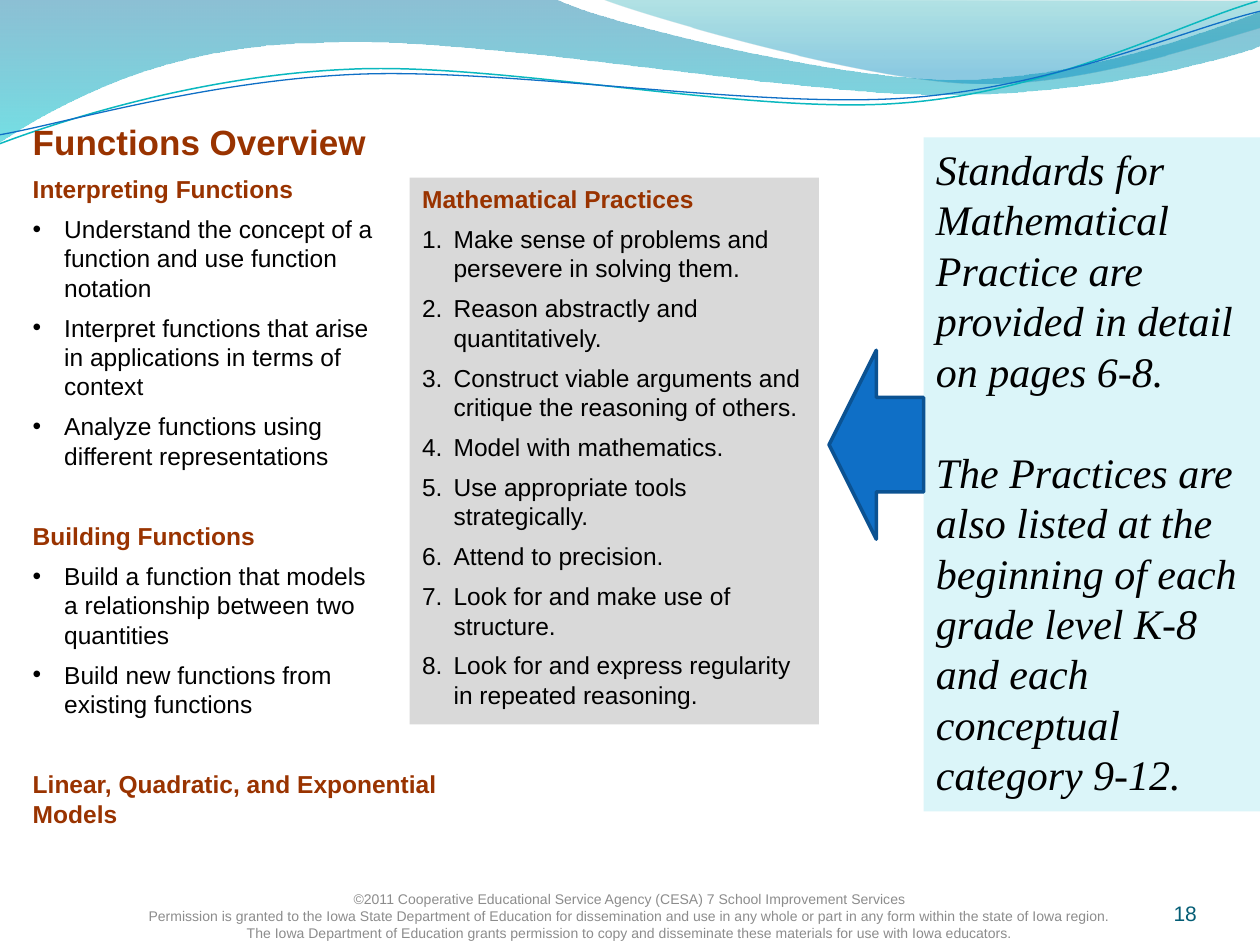
from dataclasses import dataclass
from math import cos, radians, sin

from pptx import Presentation
from pptx.dml.color import RGBColor
from pptx.enum.shapes import MSO_SHAPE
from pptx.enum.text import MSO_ANCHOR, MSO_AUTO_SIZE, PP_ALIGN
from pptx.oxml.ns import qn
from pptx.oxml.xmlchemy import OxmlElement
from pptx.util import Emu, Inches, Pt

RECT, ARROW = MSO_SHAPE.RECTANGLE, MSO_SHAPE.LEFT_ARROW
TOP, MIDDLE, BOTTOM = MSO_ANCHOR.TOP, MSO_ANCHOR.MIDDLE, MSO_ANCHOR.BOTTOM
LEFT, CENTER, RIGHT = PP_ALIGN.LEFT, PP_ALIGN.CENTER, PP_ALIGN.RIGHT
FIXED, GROW = MSO_AUTO_SIZE.NONE, MSO_AUTO_SIZE.SHAPE_TO_FIT_TEXT
TILT = 2.7


@dataclass(frozen=True)
class Theme:
    sans: str = "Arial"
    serif: str = "Times New Roman"
    ink: str = "000000"
    rust: str = "993300"
    blue: str = "0F6FC6"
    navy: str = "0B5292"
    teal: str = "0AB8BF"
    pale: str = "DBF5F9"
    gray: str = "D9D9D9"
    note: str = "8C8C8C"
    page: str = "045D75"
    title: int = 20
    body: int = 14
    side: int = 24
    small: int = 8
    number: int = 12


THEME = Theme()

BANDS = [
    ([(0, -0.01), (4.4, -0.01),
      (4.76, 0.17, 6.64, 0.63, 7.58, 0.63), (8.53, 0.63, 9.58, 0.26, 10, 0.09),
      (10.01, 0.36), (9.83, 0.44, 8.7, 0.76, 7.46, 0.75),
      (6.22, 0.75, 3.82, 0.28, 2.57, 0.34), (1.29, 0.35, 0.46, 0.83, -0.01, 1.13)],
     [(0, "0074A1", 45), (1, "00C6CF", 55)]),
    ([(4.79, 0), (5.09, 0.12, 6.82, 0.63, 7.69, 0.66),
      (8.56, 0.7, 9.61, 0.33, 10, 0.22), (10, 0.01)],
     [(0, "00A1A9", 30), (0.8, "008BBF", 45)]),
]
WAVES = [
    ([(0, 1.14), (0.48, 0.96, 1.58, 0.6, 2.77, 0.55),
      (3.95, 0.49, 5.93, 0.91, 7.13, 0.82), (8.33, 0.74, 9.38, 0.18, 9.98, 0.01)],
     THEME.teal, 0.85),
    ([(0, 1.07), (0.47, 0.99, 1.64, 0.64, 2.83, 0.59),
      (4.03, 0.54, 5.97, 0.86, 7.17, 0.78), (8.36, 0.7, 9.41, 0.23, 10, 0.09)],
     THEME.blue, 0.75),
]
TOPICS = [
    ("Interpreting Functions",
     ["Understand the concept of a\nfunction and use function\nnotation",
      "Interpret functions that arise\nin applications in terms of\ncontext",
      "Analyze functions using\ndifferent representations"]),
    ("Building Functions",
     ["Build a function that models\na relationship between two\nquantities",
      "Build new functions from\nexisting functions"]),
    ("Linear, Quadratic, and Exponential Models", []),
]
HABITS = [
    "Make sense of problems and persevere in solving them.",
    "Reason abstractly and quantitatively.",
    "Construct viable arguments and critique the reasoning of others.",
    "Model with mathematics.",
    "Use appropriate tools strategically.",
    "Attend to precision.",
    "Look for and make use of structure.",
    "Look for and express regularity in repeated reasoning.",
]
SIDE = [
    "Standards for Mathematical Practice are provided in detail on pages 6-8.",
    "The Practices are also listed at the beginning of each grade level K-8 "
    "and each conceptual category 9-12.",
]
RIGHTS = [
    "©2011 Cooperative Educational Service Agency (CESA) 7 School Improvement Services",
    "Permission is granted to the Iowa State Department of Education for dissemination "
    "and use in any whole or part in any form within the state of Iowa region.",
    "The Iowa Department of Education grants permission to copy and disseminate these "
    "materials for use with Iowa educators.",
]


def paint(shape, color):
    shape.fill.solid()
    shape.fill.fore_color.rgb = RGBColor.from_string(color)


def place(shape, *box):
    shape.left, shape.top, shape.width, shape.height = map(Inches, box)


def turn(x, y, angle, mid=(5, 0.61)):
    c, s = cos(radians(angle)), sin(radians(angle))
    dx, dy = x - mid[0], y - mid[1]
    return Inches(mid[0] + dx * c - dy * s), Inches(mid[1] + dx * s + dy * c)


def add_curve(slide, parts, close, depth, angle=0):
    points = [turn(*part[i:i + 2], angle) for part in parts for i in range(0, len(part), 2)]
    form = slide.shapes.build_freeform(*points[0], scale=1.0)
    form.add_line_segments(points[1:], close=close)
    shape = form.convert_to_shape()
    shape.shadow.inherit = False
    shape.rotation = -angle % 360
    lines = iter(list(shape._element.iter(qn("a:lnTo"))))
    for part in parts[1:]:
        line = next(lines)
        if len(part) == 6:
            bend = OxmlElement("a:cubicBezTo")
            line.addprevious(bend)
            for node in (line, next(lines), next(lines)):
                bend.append(node[0])
                node.getparent().remove(node)
    slide.shapes._spTree.insert(depth, shape._element)
    return shape


def add_band(slide, parts, stops, depth):
    shape = add_curve(slide, parts, True, depth)
    shape.line.fill.background()
    shape.fill.gradient()
    shape.fill.gradient_angle = 270
    for stop, (where, color, _) in zip(shape.fill.gradient_stops, stops):
        stop.position = where
        stop.color.rgb = RGBColor.from_string(color)
    for node, (_, _, solid) in zip(shape._element.spPr.iter(qn("a:srgbClr")), stops):
        alpha = OxmlElement("a:alpha")
        alpha.set("val", str(solid * 1000))
        node.append(alpha)


def add_wave(slide, parts, color, width, depth):
    shape = add_curve(slide, parts, False, depth, TILT)
    shape.fill.background()
    shape.line.color.rgb = RGBColor.from_string(color)
    shape.line.width = Pt(width)


def set_frame(shape, anchor=TOP, size=FIXED):
    frame = shape.text_frame
    frame.word_wrap = True
    frame.auto_size = size
    frame.vertical_anchor = anchor
    return frame


def set_mark(para, mark):
    props = para._p.get_or_add_pPr()
    props.set("marL", str(Inches(0.25) if mark else 0))
    props.set("indent", str(Inches(-0.25) if mark else 0))
    if mark:
        font = OxmlElement("a:buFont")
        font.set("typeface", THEME.sans)
        props.append(font)
    kind = {None: "a:buNone", "•": "a:buChar", "1.": "a:buAutoNum"}[mark]
    node = OxmlElement(kind)
    if mark == "•":
        node.set("char", mark)
    elif mark:
        node.set("type", "arabicPeriod")
    props.append(node)


def add_para(frame, text, size, color, face=THEME.sans, bold=False, italic=False,
             align=LEFT, before=0, after=0, mark=None):
    first = frame.paragraphs[0]
    para = frame.add_paragraph() if first.runs else first
    para.alignment = align
    para.line_spacing = Pt(1.2 * size)
    para.space_before, para.space_after = Pt(before), Pt(after)
    set_mark(para, mark)
    for row, line in enumerate(text.split("\n")):
        if row:
            para.add_line_break()
        run = para.add_run()
        run.text = line
        font = run.font
        font.name, font.size, font.bold, font.italic = face, Pt(size), bold, italic
        font.color.rgb = RGBColor.from_string(color)


def add_head(frame, text, before=0):
    add_para(frame, text, THEME.body, THEME.rust, bold=True, before=before, after=6)


def add_list(frame, items, mark):
    for item in items:
        add_para(frame, item, THEME.body, THEME.ink, after=6, mark=mark)


def add_block(slide, kind, color, *box):
    shape = slide.shapes.add_shape(kind, *map(Inches, box))
    shape.shadow.inherit = False
    paint(shape, color)
    shape.line.fill.background()
    return shape


def add_label(slide, box, anchor, lines, size, color, align, inset=None):
    frame = set_frame(slide.shapes.add_textbox(*map(Inches, box)), anchor)
    if inset is not None:
        frame.margin_left = frame.margin_right = Emu(inset)
        frame.margin_top = frame.margin_bottom = Emu(inset)
    for line in lines:
        add_para(frame, line, size, color, align=align)


def main():
    deck = Presentation()
    deck.slide_width, deck.slide_height = Inches(10), Inches(7.5)
    slide = deck.slides.add_slide(deck.slide_layouts[3])
    title, topics, habits = slide.placeholders

    for depth, band in enumerate(BANDS, 2):
        add_band(slide, *band, depth)
    for depth, wave in enumerate(WAVES, 2 + len(BANDS)):
        add_wave(slide, *wave, depth)

    place(title, 0.16, 0.91, 3.42, 0.42)
    add_para(set_frame(title), "Functions Overview", THEME.title, THEME.rust, bold=True)
    place(topics, 0.16, 1.33, 3.42, 5.84)
    frame = set_frame(topics)
    for row, (head, items) in enumerate(TOPICS):
        add_head(frame, head, before=23 if row else 0)
        add_list(frame, items, "•")

    place(habits, 3.25, 1.41, 3.25, 4.34)
    paint(habits, THEME.gray)
    frame = set_frame(habits)
    add_head(frame, "Mathematical Practices")
    add_list(frame, HABITS, "1.")

    side = add_block(slide, RECT, THEME.pale, 7.33, 1.09, 2.67, 5.35)
    frame = set_frame(side, size=GROW)
    for row, text in enumerate(SIDE):
        add_para(frame, text, THEME.side, THEME.ink, face=THEME.serif, italic=True,
                 before=29 if row else 0)
    arrow = add_block(slide, ARROW, THEME.blue, 6.58, 2.78, 0.75, 1.5)
    arrow.line.color.rgb = RGBColor.from_string(THEME.navy)
    arrow.line.width = Pt(2)

    add_label(slide, (8.67, 6.95, 0.83, 0.4), BOTTOM, ["18"],
              THEME.number, THEME.page, RIGHT, inset=0)
    add_label(slide, (0.5, 7.07, 9, 0.4), MIDDLE, RIGHTS, THEME.small, THEME.note, CENTER)
    deck.save("out.pptx")


if __name__ == "__main__":
    main()
